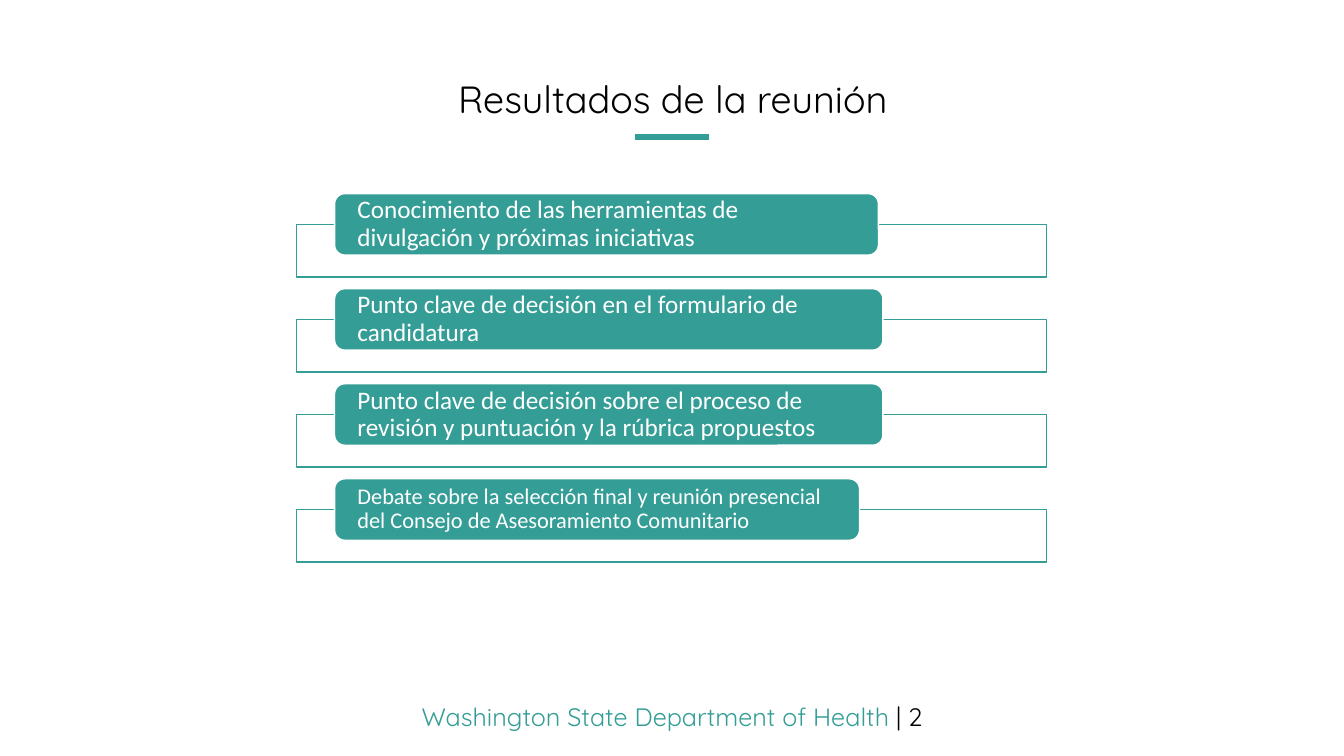
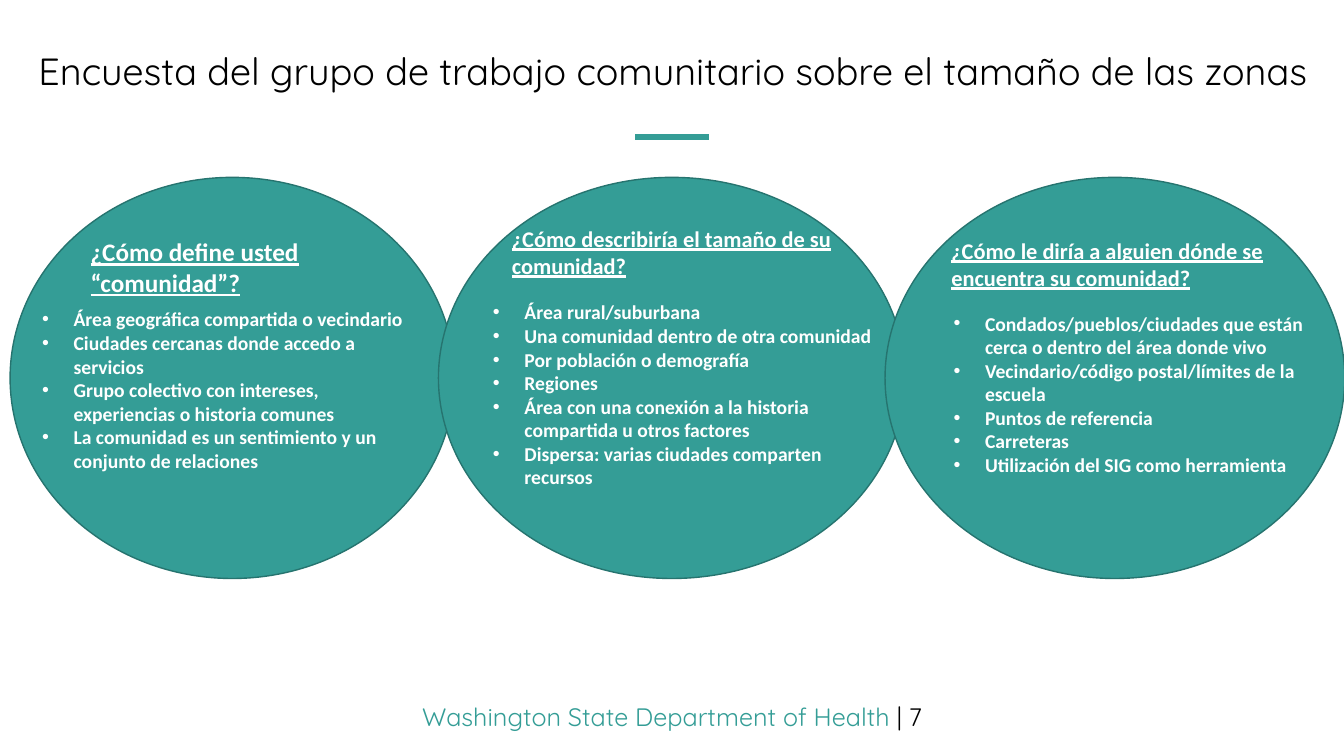
"""Build two slides on the outcomes of a meeting and a community survey."""
from dataclasses import dataclass

from lxml.etree import SubElement
from pptx import Presentation
from pptx.dml.color import RGBColor
from pptx.enum.shapes import MSO_CONNECTOR as Link, MSO_SHAPE as Kind
from pptx.enum.text import MSO_ANCHOR as Anchor, MSO_AUTO_SIZE as Fit, PP_ALIGN as Align
from pptx.oxml.ns import qn
from pptx.shapes.autoshape import Shape
from pptx.slide import Slide
from pptx.text.text import TextFrame
from pptx.util import Pt

TEAL = RGBColor(0x34, 0x9D, 0x96)
DARK = RGBColor(0x26, 0x74, 0x6F)
WHITE = RGBColor(0xFF, 0xFF, 0xFF)
BLACK = RGBColor(0, 0, 0)
WIDE, HIGH = 960, 540
INDENT = 22.5


@dataclass(frozen=True)
class Look:
    """Style of the letters."""
    font: str
    size: float
    color: RGBColor
    bold: bool = False
    under: bool = False


@dataclass(frozen=True)
class Box:
    """Place and size in points."""
    left: float
    top: float
    width: float
    height: float


@dataclass(frozen=True)
class Goal:
    """One row in the list of goals."""
    text: str
    width: float
    size: float = 18


@dataclass(frozen=True)
class Topic:
    """One oval with its question and answers."""
    oval: Box
    head: Box
    size: float
    question: str
    body: Box
    answers: tuple[str, ...]


TITLE = Look("Quicksand", 27, BLACK)
FOOT = Look("Quicksand", 18, TEAL)
PAGE = Look("Quicksand", 18, BLACK)
ANSWER = Look("Calibri", 14, WHITE, bold=True)

GOALS = (
    Goal("Conocimiento de las herramientas de divulgación y próximas iniciativas", 388.5),
    Goal("Punto clave de decisión en el formulario de candidatura", 391.7),
    Goal("Punto clave de decisión sobre el proceso de revisión y puntuación "
         "y la rúbrica propuestos", 391.7),
    Goal("Debate sobre la selección final y reunión presencial del Consejo "
         "de Asesoramiento Comunitario", 375, 16),
)

TOPICS = (
    Topic(Box(7.2, 126.7, 317.5, 286.5), Box(57.6, 165.6, 254.2, 28.8), 18,
          "¿Cómo define usted “comunidad”?",
          Box(23, 216, 286.5, 147.6),
          ("Área geográfica compartida o vecindario",
           "Ciudades cercanas donde accedo a servicios",
           "Grupo colectivo con intereses, experiencias o historia comunes",
           "La comunidad es un sentimiento y un conjunto de relaciones")),
    Topic(Box(313.2, 126.7, 333.4, 286.5), Box(358.6, 157, 254.2, 46), 16,
          "¿Cómo describiría el tamaño de su comunidad?",
          Box(345, 211, 286.5, 165),
          ("Área rural/suburbana",
           "Una comunidad dentro de otra comunidad",
           "Por población o demografía",
           "Regiones",
           "Área con una conexión a la historia compartida u otros factores",
           "Dispersa: varias ciudades comparten recursos")),
    Topic(Box(632.2, 126.7, 328.3, 286.5), Box(672.5, 165.6, 278, 46), 16,
          "¿Cómo le diría a alguien dónde se encuentra su comunidad?",
          Box(674, 218.9, 286.5, 181.4),
          ("Condados/pueblos/ciudades que están cerca o dentro del área donde vivo",
           "Vecindario/código postal/límites de la escuela",
           "Puntos de referencia",
           "Carreteras",
           "Utilización del SIG como herramienta")),
)


def style(run, look: Look) -> None:
    """Give a run its look."""
    font = run.font
    font.name, font.size = look.font, Pt(look.size)
    font.bold, font.underline = look.bold, look.under
    font.color.rgb = look.color


def write(frame: TextFrame, text: str, look: Look, align: Align = Align.LEFT,
          space: float = 1) -> None:
    """Fill a frame with wrapped text, one paragraph a line."""
    frame.word_wrap = True
    frame.text = text
    for para in frame.paragraphs:
        para.alignment, para.line_spacing = align, space
        for run in para.runs:
            style(run, look)


def add_text(slide: Slide, box: Box) -> TextFrame:
    """Add an empty text box."""
    return slide.shapes.add_textbox(
        Pt(box.left), Pt(box.top), Pt(box.width), Pt(box.height)).text_frame


def add_form(slide: Slide, kind: Kind, box: Box, fill: RGBColor, edge: RGBColor) -> Shape:
    """Add a filled shape with a thin edge."""
    form = slide.shapes.add_shape(
        kind, Pt(box.left), Pt(box.top), Pt(box.width), Pt(box.height))
    form.shadow.inherit = False
    form.fill.solid()
    form.fill.fore_color.rgb = fill
    form.line.color.rgb = edge
    form.line.width = Pt(1)
    return form


def add_dots(frame: TextFrame) -> None:
    """Put a hanging bullet before each paragraph."""
    for para in frame.paragraphs:
        props = para._p.get_or_add_pPr()
        props.set("marL", str(Pt(INDENT)))
        props.set("indent", str(-Pt(INDENT)))
        SubElement(props, qn("a:buFont")).set("typeface", "Arial")
        SubElement(props, qn("a:buChar")).set("char", "•")


def add_slide(deck: Presentation, title: str, top: float, page: int) -> Slide:
    """Add a slide with its title, rule and footer."""
    slide = deck.slides.add_slide(deck.slide_layouts[6])
    rule = slide.shapes.add_connector(Link.STRAIGHT, Pt(453.6), Pt(98), Pt(506.4), Pt(98))
    rule.line.color.rgb = TEAL
    rule.line.width = Pt(4)
    SubElement(rule._element.spPr, qn("a:effectLst"))

    foot = add_text(slide, Box(0, 497.5, WIDE, 29))
    write(foot, "Washington State Department of Health ", FOOT, Align.CENTER)
    number = foot.paragraphs[0].add_run()
    number.text = f"| {page}"
    style(number, PAGE)

    head = add_text(slide, Box(1, top, WIDE - 1, 38))
    head.vertical_anchor = Anchor.MIDDLE
    write(head, title, TITLE, Align.CENTER, 0.9)
    return slide


def draw_goals(slide: Slide) -> None:
    """Draw the goals as tags on evenly spaced frames."""
    for row, goal in enumerate(GOALS):
        top = 138.3 + row * 67.9
        add_form(slide, Kind.RECTANGLE, Box(211.7, top + 22, 535.7, 37.6), WHITE, TEAL)
        tag = add_form(slide, Kind.ROUNDED_RECTANGLE,
                       Box(239, top, goal.width, 43.9), TEAL, WHITE)
        frame = tag.text_frame
        frame.margin_left = frame.margin_right = Pt(14.2)
        frame.margin_top = frame.margin_bottom = 0
        frame.vertical_anchor = Anchor.MIDDLE
        write(frame, goal.text, Look("Calibri", goal.size, WHITE), space=0.9)


def draw_topics(slide: Slide) -> None:
    """Draw the ovals, then their questions and answers."""
    for topic in TOPICS:
        add_form(slide, Kind.OVAL, topic.oval, TEAL, DARK)
    for topic in TOPICS:
        head = add_text(slide, topic.head)
        write(head, topic.question, Look("Calibri", topic.size, WHITE, True, True))
        body = add_text(slide, topic.body)
        write(body, "\n".join(topic.answers), ANSWER)
        add_dots(body)
        head.auto_size = body.auto_size = Fit.SHAPE_TO_FIT_TEXT


def main() -> None:
    """Build and save the deck."""
    deck = Presentation()
    deck.slide_width, deck.slide_height = Pt(WIDE), Pt(HIGH)
    draw_goals(add_slide(deck, "Resultados de la reunión", 53.3, 2))
    draw_topics(add_slide(
        deck, "Encuesta del grupo de trabajo comunitario sobre el tamaño de las zonas", 33.1, 7))
    deck.save("out.pptx")


if __name__ == "__main__":
    main()
